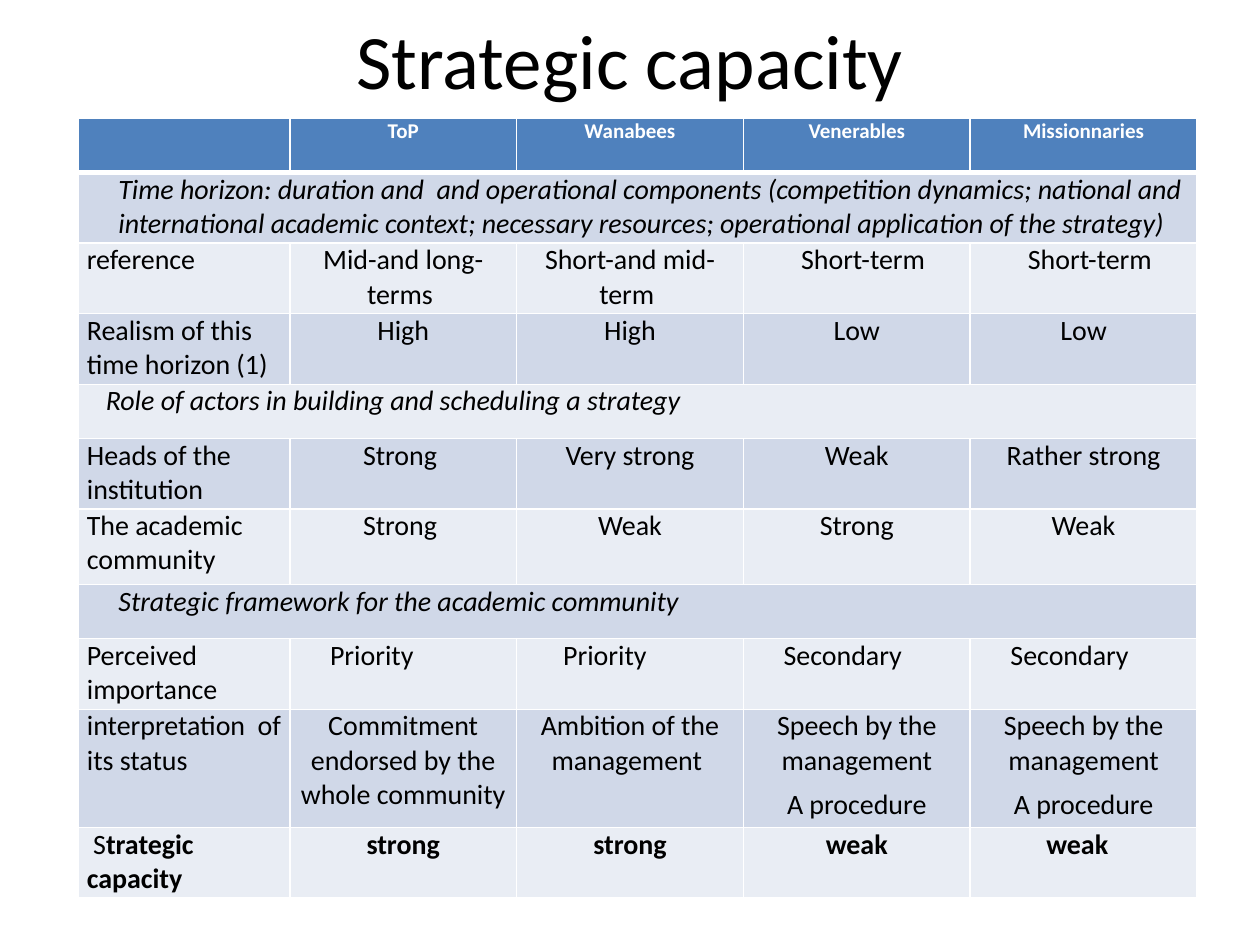
import dataclasses
import typing

import lxml.etree
import pptx
import pptx.dml.color
import pptx.enum.text
import pptx.oxml.ns
import pptx.util

EMU_PER_PX = 9144  # 100 px to the inch
ALIGN = pptx.enum.text.PP_ALIGN


@dataclasses.dataclass(frozen=True)
class Theme:
    font: str = "Calibri"
    title_size: int = 44
    header_size: int = 12
    body_size: int = 16
    paragraph_gap: int = 6
    text: str = "000000"
    header_text: str = "FFFFFF"
    header_fill: str = "4F81BD"
    bands: tuple[str, str] = ("D0D8E8", "E9EDF4")
    border: str = "FFFFFF"
    thin: int = 1
    thick: int = 3


@dataclasses.dataclass(frozen=True)
class Entry:
    """One table cell; each newline in the text starts a paragraph."""
    text: str
    align: typing.Any = ALIGN.CENTER
    left: int = 0  # extra inset in px
    right: int = 0
    bold: bool = False
    italic: bool = False
    plain_start: int = 0  # leading characters that stay regular


@dataclasses.dataclass(frozen=True)
class Row:
    height: int
    entries: tuple[Entry, ...]


THEME = Theme()
SIDE_INSET = 7
COLUMNS = (168, 180, 180, 180, 180)


def px(length: int) -> pptx.util.Emu:
    return pptx.util.Emu(length * EMU_PER_PX)


def set_all(target: typing.Any, values: dict[str, typing.Any]) -> None:
    for name, value in values.items():
        setattr(target, name, value)


def label(text: str, **options: typing.Any) -> Entry:
    return Entry(text, ALIGN.LEFT, **options)


def section(height: int, text: str, left: int) -> Row:
    return Row(height, (label(text, left=left, italic=True),))


def ratings(height: int, name: Entry, *values: str | Entry) -> Row:
    entries = (value if isinstance(value, Entry) else Entry(value) for value in values)
    return Row(height, (name, *entries))


def header(*names: str) -> Row:
    return Row(43, tuple(Entry(name, bold=True) for name in names))


SHORT_TERM = Entry("Short-term", left=10)
SECONDARY = Entry("Secondary", ALIGN.JUSTIFY, left=25)
SPEECH = "Speech by the management\nA procedure"

ROWS = (
    header("", "ToP", "Wanabees", "Venerables", "Missionnaries"),
    section(56, "Time horizon: duration and  and operational components (competition "
            "dynamics; national and international academic context; necessary "
            "resources; operational application of the strategy)", 25),
    ratings(56, label("reference"), "Mid-and long- terms ", "Short-and mid-term ",
            SHORT_TERM, SHORT_TERM),
    ratings(56, label("Realism of this time horizon (1)"), "High", "High", "Low", "Low"),
    section(43, "Role of actors in building and scheduling a strategy", 15),
    ratings(56, label("Heads of the institution"),
            "Strong ", "Very strong", "Weak", "Rather strong"),
    ratings(60, label("The academic community"), "Strong ", "Weak", "Strong", "Weak"),
    section(43, "Strategic framework for the academic community", 25),
    ratings(56, label("Perceived importance"), label("Priority", left=25),
            label("Priority", left=30), SECONDARY, SECONDARY),
    ratings(94, Entry("interpretation of its status ", ALIGN.JUSTIFY),
            "Commitment endorsed by the whole community ",
            "Ambition of the management ", SPEECH, SPEECH),
    ratings(56, label(" Strategic capacity", bold=True, plain_start=2),
            Entry("strong", bold=True), Entry("strong", bold=True),
            Entry("weak", bold=True), Entry("weak", bold=True, right=10)),
)


def add_span(para: typing.Any, text: str, size: int, color: str,
             bold: bool = False, italic: bool = False) -> None:
    span = para.add_run()
    span.text = text
    set_all(span.font, {"name": THEME.font, "size": pptx.util.Pt(size),
                        "bold": bold, "italic": italic})
    span.font.color.rgb = pptx.dml.color.RGBColor.from_string(color)


def draw_borders(cell: typing.Any, row_index: int) -> None:
    """Rule all four sides, with a thick line below the header row."""
    properties = cell._tc.get_or_add_tcPr()
    widths = {"L": THEME.thin, "R": THEME.thin,
              "T": THEME.thick if row_index == 1 else THEME.thin,
              "B": THEME.thick if row_index == 0 else THEME.thin}
    for side, width in widths.items():
        line = lxml.etree.SubElement(properties, pptx.oxml.ns.qn(f"a:ln{side}"),
                                     w=str(pptx.util.Pt(width)))
        fill = lxml.etree.SubElement(line, pptx.oxml.ns.qn("a:solidFill"))
        lxml.etree.SubElement(fill, pptx.oxml.ns.qn("a:srgbClr"), val=THEME.border)


def style_cell(cell: typing.Any, row_index: int) -> None:
    draw_borders(cell, row_index)
    color = THEME.bands[(row_index - 1) % 2] if row_index else THEME.header_fill
    cell.fill.solid()
    cell.fill.fore_color.rgb = pptx.dml.color.RGBColor.from_string(color)


def write_entry(cell: typing.Any, entry: Entry, size: int, color: str) -> None:
    set_all(cell, {"margin_left": px(SIDE_INSET + entry.left),
                   "margin_right": px(SIDE_INSET + entry.right),
                   "margin_top": 0, "margin_bottom": 0})
    for index, text in enumerate(entry.text.split("\n")):
        para = cell.text_frame.paragraphs[0] if index == 0 else cell.text_frame.add_paragraph()
        para.alignment = entry.align
        if index:
            para.space_before = pptx.util.Pt(THEME.paragraph_gap)
        if entry.plain_start:
            add_span(para, text[:entry.plain_start], size, color)
        if text:
            add_span(para, text[entry.plain_start:], size, color, entry.bold, entry.italic)


def draw_title(page: typing.Any, text: str) -> None:
    box = page.shapes.add_textbox(px(50), px(0), px(900), px(94))
    set_all(box.text_frame, {"word_wrap": True,
                             "vertical_anchor": pptx.enum.text.MSO_ANCHOR.MIDDLE})
    para = box.text_frame.paragraphs[0]
    para.alignment = ALIGN.CENTER
    add_span(para, text, THEME.title_size, THEME.text)


def draw_table(page: typing.Any, rows: tuple[Row, ...]) -> None:
    height = sum(row.height for row in rows)
    table = page.shapes.add_table(len(rows), len(COLUMNS), px(62), px(94),
                                  px(sum(COLUMNS)), px(height)).table
    set_all(table, {"first_row": False, "horz_banding": False})
    for column, width in zip(table.columns, COLUMNS):
        column.width = px(width)
    for row_index, row in enumerate(rows):
        table.rows[row_index].height = px(row.height)
        for cell in table.rows[row_index].cells:
            style_cell(cell, row_index)
        # A lone entry is a section heading across the table
        if len(row.entries) == 1:
            table.cell(row_index, 0).merge(table.cell(row_index, len(COLUMNS) - 1))
        size, color = ((THEME.body_size, THEME.text) if row_index
                       else (THEME.header_size, THEME.header_text))
        for column_index, entry in enumerate(row.entries):
            write_entry(table.cell(row_index, column_index), entry, size, color)


def main() -> None:
    deck = pptx.Presentation()
    set_all(deck, {"slide_width": px(1000), "slide_height": px(750)})
    page = deck.slides.add_slide(deck.slide_layouts[6])
    draw_title(page, "Strategic capacity")
    draw_table(page, ROWS)
    deck.save("out.pptx")


if __name__ == "__main__":
    main()
